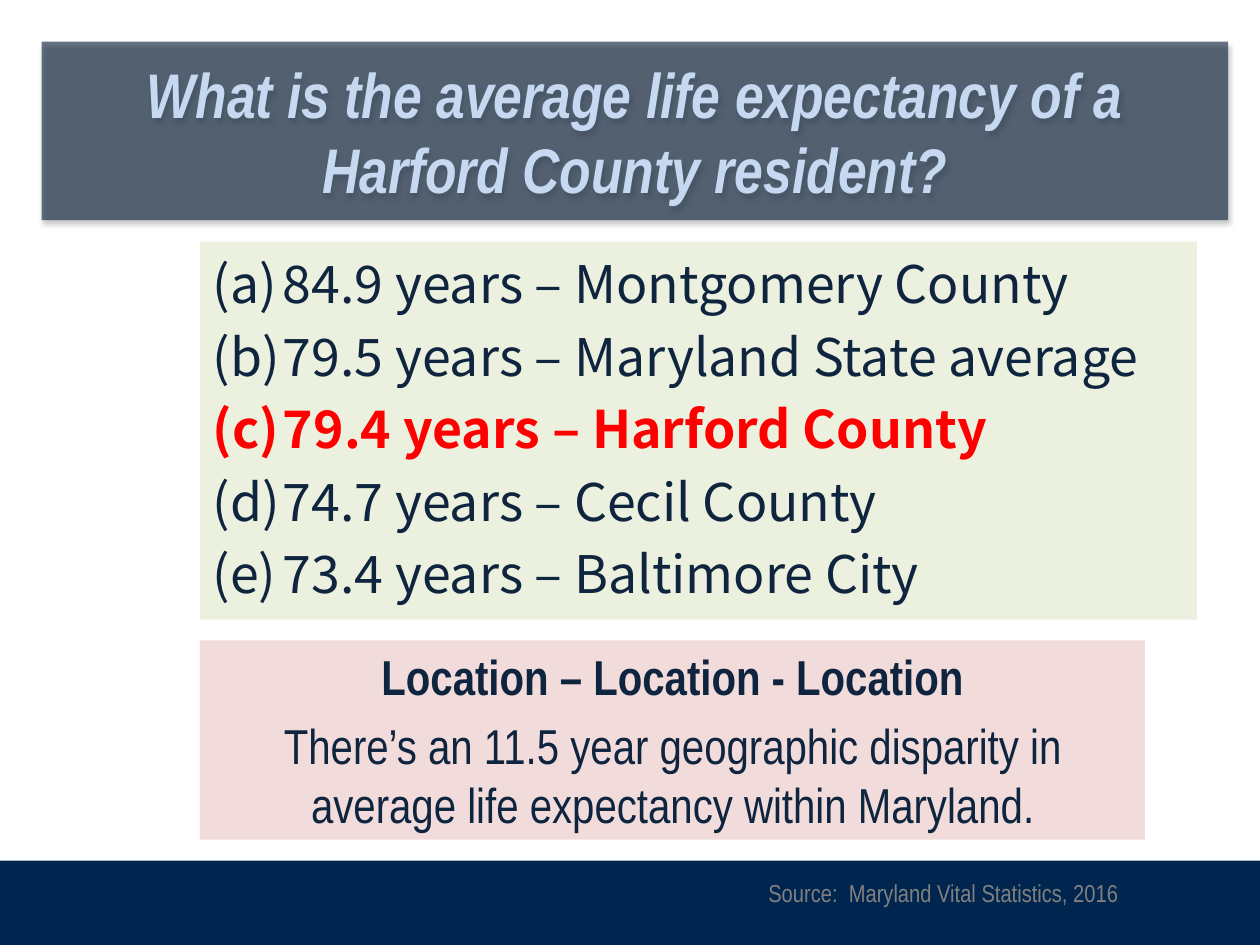
from lxml import etree
from pptx import Presentation
from pptx import util as u
from pptx.dml.color import RGBColor
from pptx.enum import shapes, text
from pptx.oxml import ns

COLORS = {
    "bar": "002650",
    "navy": "0F243E",
    "title": "C6D9F1",
    "answers": "EBF1DE",
    "correct": "FF0000",
    "note": "F2DCDB",
    "source": "808080",
    "shadow": "000000",
}
NARROW = "Arial Narrow"
SANS = "Noto Sans CJK SC"
ANSWERS = [
    "84.9 years – Montgomery County",
    "79.5 years – Maryland State average",
    "79.4 years – Harford County",
    "74.7 years – Cecil County",
    "73.4 years – Baltimore City",
]
CORRECT_ANSWER = 2
NOTE = [
    "Location – Location - Location",
    "There’s an 11.5 year geographic disparity in average life expectancy within Maryland.",
]


def rgb(name):
    return RGBColor.from_string(COLORS[name])


def add_element(parent, tag, **attributes):
    return etree.SubElement(parent, ns.qn(tag), attributes)


def place(shape, left, top, width, height):
    shape.left, shape.top = u.Cm(left), u.Cm(top)
    shape.width, shape.height = u.Cm(width), u.Cm(height)


def fill_shape(shape, color):
    shape.fill.solid()
    shape.fill.fore_color.rgb = rgb(color)


def set_font(paragraph, name, size, color, bold=False, italic=False):
    font = paragraph.font
    font.name, font.size = name, u.Pt(size)
    font.bold, font.italic = bold, italic
    font.color.rgb = rgb(color)


def write_paragraphs(frame, lines):
    frame.word_wrap = True
    frame.auto_size = text.MSO_AUTO_SIZE.NONE
    frame.text = "\n".join(lines)
    return frame.paragraphs


def add_panel(slide, color, *box):
    panel = slide.shapes.add_shape(
        shapes.MSO_SHAPE.RECTANGLE, *(u.Cm(length) for length in box)
    )
    panel.shadow.inherit = False
    fill_shape(panel, color)
    panel.line.fill.background()
    return panel


def add_soft_shadow(shape):
    effects = add_element(shape.element.spPr, "a:effectLst")
    shadow = add_element(
        effects, "a:outerShdw", blurRad=str(u.Pt(3.1)), dist=str(u.Pt(1.8)),
        dir="5400000", rotWithShape="0",
    )
    color = add_element(shadow, "a:srgbClr", val=COLORS["shadow"])
    add_element(color, "a:alpha", val="35000")


def format_title(title):
    place(title, 0.84, 0.84, 23.92, 3.6)
    fill_shape(title, "navy")
    fill_color = title.element.spPr.find(".//" + ns.qn("a:srgbClr"))
    add_element(fill_color, "a:alpha", val="63000")
    add_soft_shadow(title)
    paragraph = write_paragraphs(
        title.text_frame,
        ["What is the average life expectancy of a Harford County resident?"],
    )[0]
    title.text_frame.vertical_anchor = text.MSO_ANCHOR.MIDDLE
    paragraph.alignment = text.PP_ALIGN.CENTER
    set_font(paragraph, NARROW, 36, "title", bold=True, italic=True)


def format_answers(body):
    place(body, 4.03, 4.87, 20.1, 7.62)
    fill_shape(body, "answers")
    body.text_frame.margin_top = 0
    for index, paragraph in enumerate(write_paragraphs(body.text_frame, ANSWERS)):
        paragraph.space_before = u.Pt(0)
        paragraph.line_spacing = u.Pt(41.4)
        properties = paragraph._p.get_or_add_pPr()
        properties.set("marL", str(u.Cm(1.42)))
        properties.set("indent", str(u.Cm(-1.42)))
        add_element(properties, "a:buFont", typeface="+mj-lt")
        add_element(properties, "a:buAutoNum", type="alphaLcParenBoth")
        correct = index == CORRECT_ANSWER
        set_font(paragraph, SANS, 29.6, "correct" if correct else "navy", bold=correct)


def add_note(slide):
    note = add_panel(slide, "note", 4.03, 12.91, 19.05, 4.02)
    note.text_frame.vertical_anchor = text.MSO_ANCHOR.TOP
    for index, paragraph in enumerate(write_paragraphs(note.text_frame, NOTE)):
        paragraph.alignment = text.PP_ALIGN.CENTER
        paragraph.space_before = u.Pt(5.6 * index)
        set_font(paragraph, NARROW, 28, "navy", bold=index == 0)


def add_source(slide):
    source = slide.shapes.add_textbox(u.Cm(15.24), u.Cm(17.58), u.Cm(7.62), u.Cm(0.86))
    paragraph = write_paragraphs(
        source.text_frame, ["Source:  Maryland Vital Statistics, 2016"]
    )[0]
    set_font(paragraph, NARROW, 14, "source")


def main():
    presentation = Presentation()
    presentation.slide_width, presentation.slide_height = u.Cm(25.4), u.Cm(19.05)
    slide = presentation.slides.add_slide(presentation.slide_layouts[1])
    add_panel(slide, "bar", 0, 17.35, 25.4, 1.7)
    format_title(slide.shapes.title)
    format_answers(slide.placeholders[1])
    add_source(slide)
    add_note(slide)
    presentation.save("out.pptx")


if __name__ == "__main__":
    main()
